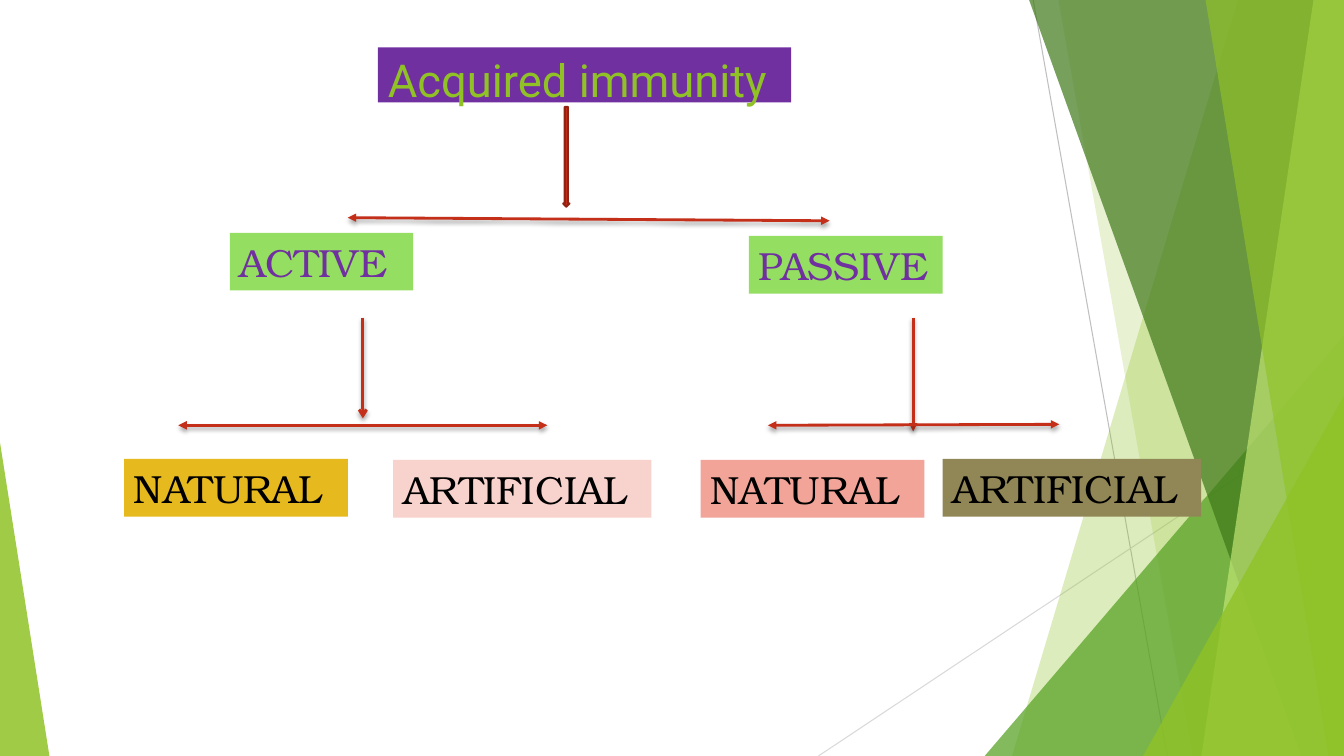
from dataclasses import dataclass
from typing import Any, Optional

from lxml import etree
from pptx import Presentation
from pptx import util as u
from pptx.dml import color as clr
from pptx.enum import shapes, text
from pptx.oxml import ns


@dataclass(frozen=True)
class Theme:
    lime: str = "90C226"
    grass: str = "54A021"
    moss: str = "3F7819"
    pale: str = "C0E474"
    purple: str = "7030A0"
    mint: str = "94DE61"
    gold: str = "E6B91E"
    blush: str = "F8D2CC"
    salmon: str = "F2A499"
    olive: str = "918655"
    red: str = "C42F1A"
    maroon: str = "912313"
    black: str = "000000"
    gray: str = "BFBFBF"
    silver: str = "D9D9D9"
    sans: str = "Roboto"
    serif: str = "TeX Gyre Bonum"
    title: float = 32.4
    label: float = 28


@dataclass(frozen=True)
class Facet:
    """Panel from a slanted edge to the right side of the slide."""
    top: float
    base: float
    fill: str
    alpha: int


@dataclass(frozen=True)
class Wedge:
    """Right triangle standing on the bottom edge."""
    left: float
    top: float
    width: float
    apex: float
    fill: str
    alpha: int


@dataclass(frozen=True)
class Label:
    words: str
    left: float
    top: float
    width: float
    fill: str
    ink: str
    height: float = 41.2
    size: float = Theme.label
    font: str = Theme.serif


@dataclass(frozen=True)
class Line:
    x1: float
    y1: float
    x2: float
    y2: float
    color: str = Theme.red
    width: float = 2
    head: Optional[str] = None
    tail: Optional[str] = None
    shadow: bool = True


T = Theme()
WIDE, HIGH = 960, 540

HAIRS = [
    Line(738, 0, 833.8, HIGH, T.gray, 0.75, shadow=False),
    Line(WIDE, 290.2, 584.6, HIGH, T.silver, 0.75, shadow=False),
]
DECOR = [
    Facet(884.2, 722.9, T.lime, 30),
    Facet(756, 851.8, T.lime, 20),
    Wedge(703.4, 239.8, 256.6, 1, T.grass, 72),
    Facet(735.1, 929.5, T.moss, 70),
    Facet(938.2, 858.2, T.pale, 70),
    Facet(861.1, 949, T.lime, 65),
    Wedge(816.5, 283, 143.5, 1, T.lime, 80),
    Wedge(0, 316.1, 35.3, 0, T.lime, 85),
]
LABELS = [
    Label("Acquired immunity", 270, 33.8, 295.2, T.purple, T.lime,
          39.4, T.title, T.sans),
    Label("ACTIVE", 164.2, 166.3, 131, T.mint, T.purple),
    Label("PASSIVE", 535, 168.5, 138.4, T.mint, T.purple),
    Label("NATURAL", 88.6, 327.8, 160, T.gold, T.black),
    Label("ARTIFICIAL", 280.8, 328.5, 184.5, T.blush, T.black),
    Label("NATURAL", 500.4, 328.5, 160, T.salmon, T.black),
    Label("ARTIFICIAL", 673.4, 327.8, 184.5, T.olive, T.black),
]
ARROWS = [
    Line(259.2, 226.8, 259.2, 298.8, tail="arrow"),
    Line(652.3, 226.8, 652.3, 308.2, tail="triangle"),
    Line(756.7, 303.1, 548.6, 303.8, head="triangle", tail="triangle"),
    Line(127.4, 303.8, 391, 303.8, head="triangle", tail="triangle"),
    Line(248.4, 155.5, 592.6, 157.7, head="triangle", tail="triangle"),
]


def rgb(code: str) -> clr.RGBColor:
    return clr.RGBColor.from_string(code)


def node(root: Any, tag: str, **attrs: Any) -> Any:
    return etree.SubElement(root, ns.qn(tag),
                            {key: str(val) for key, val in attrs.items()})


def paint(shape: Any, fill: str, alpha: int = 100) -> None:
    shape.shadow.inherit = False
    shape.fill.solid()
    shape.fill.fore_color.rgb = rgb(fill)
    shape.line.fill.background()
    if alpha < 100:
        hue = shape.element.spPr.find(".//" + ns.qn("a:srgbClr"))
        node(hue, "a:alpha", val=alpha * 1000)


def draw_facet(slide: Any, part: Facet) -> None:
    pen = slide.shapes.build_freeform(u.Pt(part.top), 0)
    pen.add_line_segments([(u.Pt(x), u.Pt(y)) for x, y in (
        (WIDE, 0), (WIDE, HIGH), (part.base, HIGH))])
    paint(pen.convert_to_shape(), part.fill, part.alpha)


def draw_wedge(slide: Any, part: Wedge) -> None:
    shape = slide.shapes.add_shape(
        shapes.MSO_SHAPE.ISOSCELES_TRIANGLE, u.Pt(part.left), u.Pt(part.top),
        u.Pt(part.width), u.Pt(HIGH - part.top))
    shape.adjustments[0] = part.apex
    paint(shape, part.fill, part.alpha)


def draw_label(slide: Any, item: Label) -> None:
    box = slide.shapes.add_shape(
        shapes.MSO_SHAPE.RECTANGLE, u.Pt(item.left), u.Pt(item.top),
        u.Pt(item.width), u.Pt(item.height))
    paint(box, item.fill)
    frame = box.text_frame
    frame.word_wrap = True
    frame.vertical_anchor = text.MSO_ANCHOR.TOP
    para = frame.paragraphs[0]
    para.alignment = text.PP_ALIGN.LEFT
    run = para.add_run()
    run.text = item.words
    run.font.name = item.font
    run.font.size = u.Pt(item.size)
    run.font.color.rgb = rgb(item.ink)


def draw_line(slide: Any, item: Line) -> None:
    wire = slide.shapes.add_connector(
        shapes.MSO_CONNECTOR.STRAIGHT, u.Pt(item.x1), u.Pt(item.y1),
        u.Pt(item.x2), u.Pt(item.y2))
    wire.line.color.rgb = rgb(item.color)
    wire.line.width = u.Pt(item.width)
    props = wire.element.spPr
    stroke = props.find(ns.qn("a:ln"))
    for tag, kind in (("a:headEnd", item.head), ("a:tailEnd", item.tail)):
        if kind:
            node(stroke, tag, type=kind)
    fx = node(props, "a:effectLst")
    if item.shadow:
        shade = node(fx, "a:outerShdw", blurRad=u.Pt(3), dist=u.Pt(2),
                     dir=90 * 60000, rotWithShape=0)
        node(node(shade, "a:srgbClr", val=T.black), "a:alpha", val=35000)


def draw_stem(slide: Any) -> None:
    stem = slide.shapes.add_shape(
        shapes.MSO_SHAPE.DOWN_ARROW, u.Pt(402.3), u.Pt(76.3),
        u.Pt(4.5), u.Pt(71.3))
    paint(stem, T.red)
    stem.line.color.rgb = rgb(T.maroon)
    stem.line.width = u.Pt(1.5)


def main() -> None:
    deck = Presentation()
    deck.slide_width, deck.slide_height = u.Pt(WIDE), u.Pt(HIGH)
    slide = deck.slides.add_slide(deck.slide_layouts[6])

    # Green backdrop
    for hair in HAIRS:
        draw_line(slide, hair)
    for part in DECOR:
        if isinstance(part, Facet):
            draw_facet(slide, part)
        else:
            draw_wedge(slide, part)

    # Tree of immunity types
    for item in LABELS:
        draw_label(slide, item)
    draw_stem(slide)
    for arrow in ARROWS:
        draw_line(slide, arrow)

    deck.save("out.pptx")


if __name__ == "__main__":
    main()
